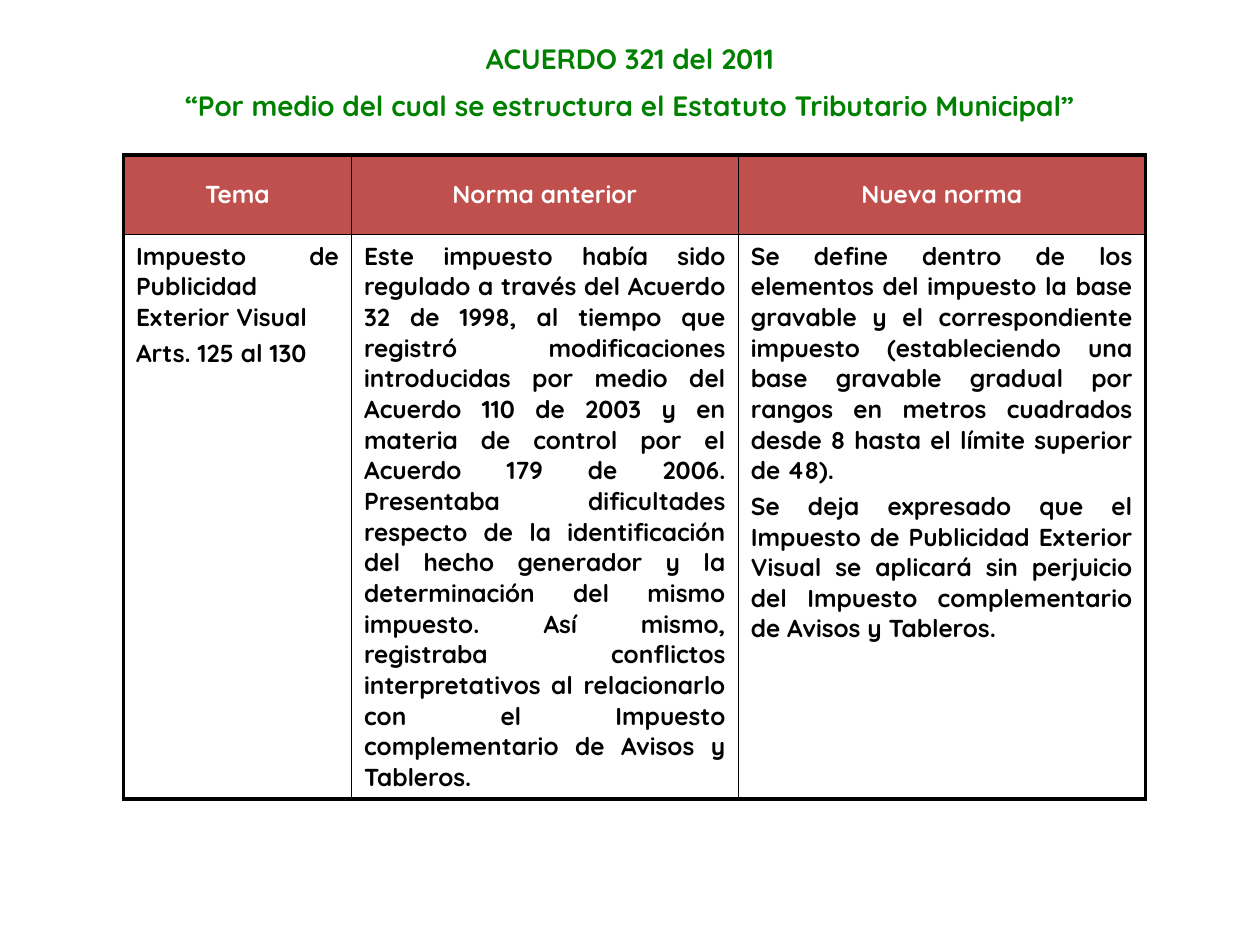
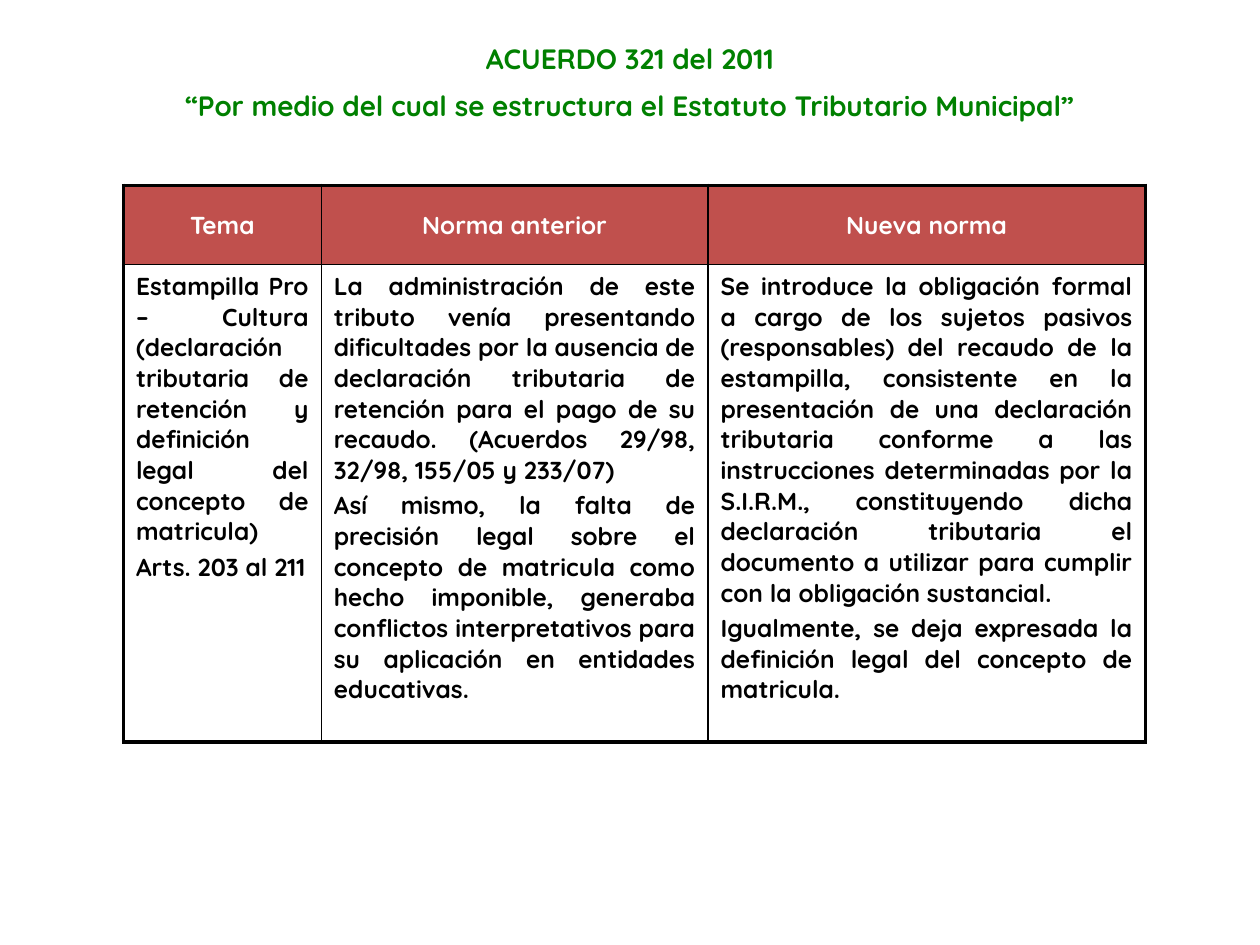
from lxml.etree import SubElement
from pptx import Presentation
from pptx.dml.color import RGBColor
from pptx.enum.text import MSO_ANCHOR, MSO_AUTO_SIZE, PP_ALIGN
from pptx.oxml.ns import qn
from pptx.util import Inches, Pt

FONT = "Quicksand"
GREEN, RED, WHITE, BLACK = "008000", "C0504D", "FFFFFF", "000000"
OUTER, INNER = 2.25, 1

TITLE = [
    "ACUERDO 321 del 2011",
    "“Por medio del cual se estructura el Estatuto Tributario Municipal”",
]
HEADERS = ["Tema", "Norma anterior", "Nueva norma"]
TABLE_LEFT, HEADER_HEIGHT = 0.98, 0.63

TOPICS = [
    {
        "top": 1.23,
        "widths": [1.81, 3.07, 3.23],
        "body_height": 4.47,
        "body": [
            ["Impuesto de Publicidad Exterior Visual", "Arts. 125 al 130"],
            ["Este impuesto había sido regulado a través del Acuerdo 32 de 1998, al tiempo que "
             "registró modificaciones introducidas por medio del Acuerdo 110 de 2003 y en materia "
             "de control por el Acuerdo 179 de 2006. Presentaba dificultades respecto de la "
             "identificación del hecho generador y la determinación del mismo impuesto. Así mismo, "
             "registraba conflictos interpretativos al relacionarlo con el Impuesto complementario "
             "de Avisos y Tableros."],
            ["Se define dentro de los elementos del impuesto la base gravable y el correspondiente "
             "impuesto (estableciendo una base gravable gradual por rangos en metros cuadrados "
             "desde 8 hasta el límite superior de 48).",
             "Se deja expresado que el Impuesto de Publicidad Exterior Visual se aplicará sin "
             "perjuicio del Impuesto complementario de Avisos y Tableros."],
        ],
    },
    {
        "top": 1.47,
        "widths": [1.57, 3.07, 3.47],
        "body_height": 3.79,
        "body": [
            ["Estampilla Pro – Cultura (declaración tributaria de retención y definición legal "
             "del concepto de matricula)",
             "Arts. 203 al 211"],
            ["La administración de este tributo venía presentando dificultades por la ausencia de "
             "declaración tributaria de retención para el pago de su recaudo. (Acuerdos 29/98, "
             "32/98, 155/05 y 233/07)",
             "Así mismo, la falta de precisión legal sobre el concepto de matricula como hecho "
             "imponible, generaba conflictos interpretativos para su aplicación en entidades "
             "educativas."],
            ["Se introduce la obligación formal a cargo de los sujetos pasivos (responsables) del "
             "recaudo de la estampilla, consistente en la presentación de una declaración "
             "tributaria conforme a las instrucciones determinadas por la S.I.R.M., constituyendo "
             "dicha declaración tributaria el documento a utilizar para cumplir con la obligación "
             "sustancial.",
             "Igualmente, se deja expresada la definición legal del concepto de matricula."],
        ],
    },
]


def rgb(color):
    return RGBColor.from_string(color)


def write(tf, paragraphs, size=14, color=BLACK, align=PP_ALIGN.JUSTIFY, gap=2.8):
    """Fill a text frame; gap is the space in points between paragraphs."""
    tf.word_wrap = True
    for i, text in enumerate(paragraphs):
        p = tf.paragraphs[0] if i == 0 else tf.add_paragraph()
        p.alignment = align
        p.space_before = Pt(gap if i else 0)
        r = p.add_run()
        r.text = text
        r.font.name, r.font.size, r.font.bold = FONT, Pt(size), True
        r.font.color.rgb = rgb(color)


def set_borders(cell, **widths):
    """Draw black borders; the keywords L, R, T and B give points."""
    tc_pr = cell._tc.get_or_add_tcPr()
    for side, width in widths.items():
        ln = SubElement(tc_pr, qn(f"a:ln{side}"), w=str(Pt(width)))
        fill = SubElement(ln, qn("a:solidFill"))
        SubElement(fill, qn("a:srgbClr"), val=BLACK)


def add_title(s):
    tf = s.shapes.add_textbox(Inches(0), Inches(0.28), Inches(10), Inches(0.77)).text_frame
    write(tf, TITLE, size=16, color=GREEN, align=PP_ALIGN.CENTER, gap=7.5)
    tf.auto_size = MSO_AUTO_SIZE.SHAPE_TO_FIT_TEXT


def add_comparison(s, topic):
    widths, heights = topic["widths"], [HEADER_HEIGHT, topic["body_height"]]
    rows = [[[header] for header in HEADERS], topic["body"]]
    table = s.shapes.add_table(len(rows), len(widths), Inches(TABLE_LEFT), Inches(topic["top"]),
                               Inches(sum(widths)), Inches(sum(heights))).table
    table.first_row = table.horz_banding = False
    for column, width in zip(table.columns, widths):
        column.width = Inches(width)
    last_row, last_column = len(rows) - 1, len(widths) - 1
    for i, row in enumerate(rows):
        table.rows[i].height = Inches(heights[i])
        for j, paragraphs in enumerate(row):
            cell = table.cell(i, j)
            set_borders(cell,
                        L=OUTER if j == 0 else INNER,
                        R=OUTER if j == last_column else INNER,
                        T=OUTER if i == 0 else INNER,
                        B=OUTER if i == last_row else INNER)
            if i == 0:
                cell.fill.solid()
                cell.fill.fore_color.rgb = rgb(RED)
                cell.vertical_anchor = MSO_ANCHOR.MIDDLE
                write(cell.text_frame, paragraphs, color=WHITE, align=PP_ALIGN.CENTER)
            else:
                cell.fill.background()
                write(cell.text_frame, paragraphs)


def main():
    prs = Presentation()
    prs.slide_width, prs.slide_height = Inches(10), Inches(7.5)
    for topic in TOPICS:
        s = prs.slides.add_slide(prs.slide_layouts[6])
        add_comparison(s, topic)
        add_title(s)
    prs.save("out.pptx")


if __name__ == "__main__":
    main()
